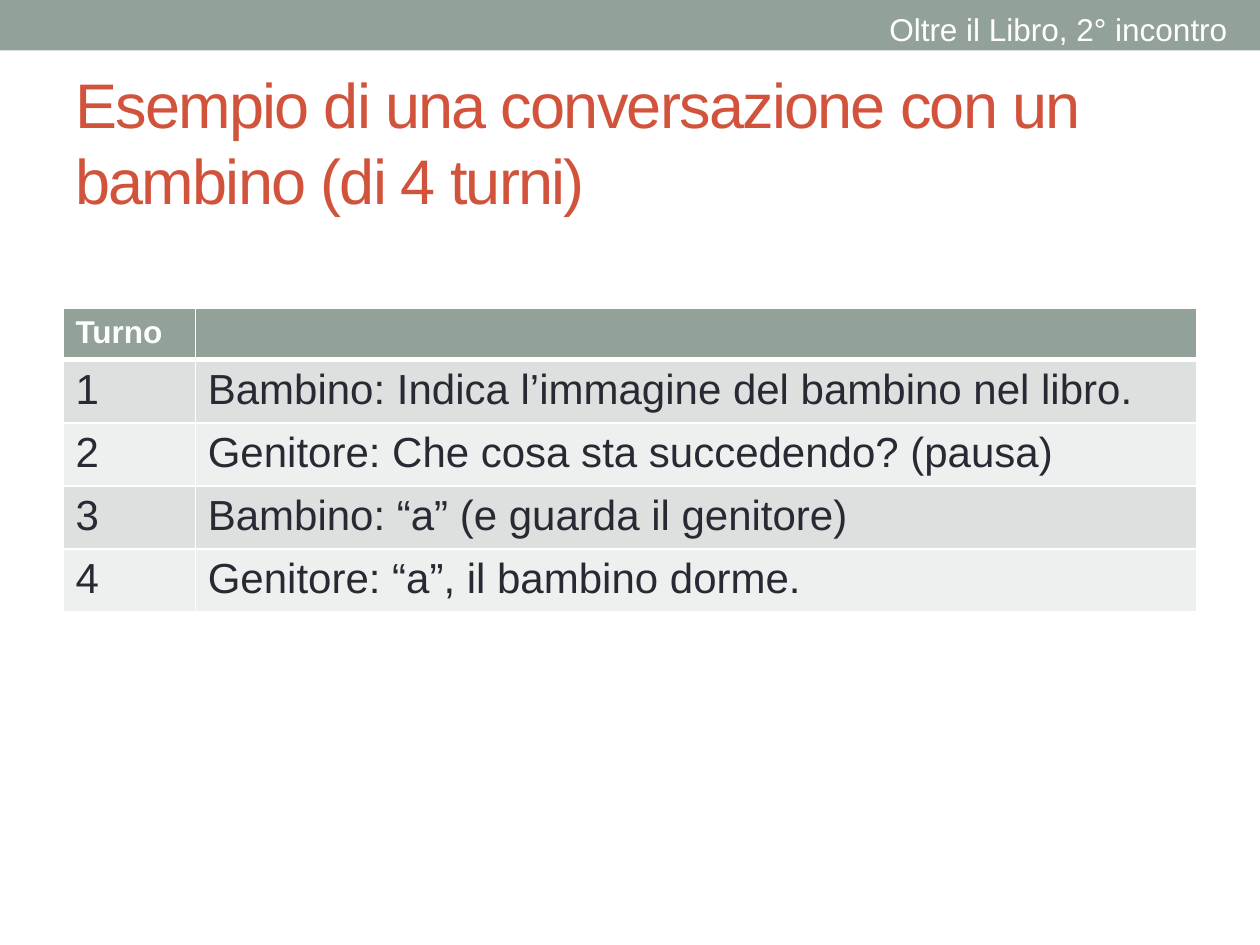
from lxml.etree import SubElement
from pptx import Presentation
from pptx.dml.color import RGBColor
from pptx.enum.shapes import MSO_SHAPE as Shape
from pptx.enum.text import MSO_ANCHOR as Anchor, MSO_AUTO_SIZE as AutoSize
from pptx.oxml.ns import qn
from pptx.util import Pt

SAGE = RGBColor(0x93, 0xA2, 0x99)
BRICK = RGBColor(0xD2, 0x53, 0x3C)
INK = RGBColor(0x29, 0x29, 0x34)
WHITE = RGBColor(0xFF, 0xFF, 0xFF)
BANDS = (RGBColor(0xDC, 0xE0, 0xDE), RGBColor(0xEE, 0xF0, 0xEF))

TURNS = (
    "Bambino: Indica l’immagine del bambino nel libro.",
    "Genitore: Che cosa sta succedendo? (pausa)",
    "Bambino: “a” (e guarda il genitore)",
    "Genitore: “a”, il bambino dorme.",
)


def add_run(frame, text, size, color, bold=False):
    """Add a styled run to the first paragraph of a text frame."""
    run = frame.paragraphs[0].add_run()
    run.text = text
    run.font.name = "Arial"
    run.font.size = Pt(size)
    run.font.color.rgb = color
    run.font.bold = bold
    return run


def add_band(slide, left, top, width, height):
    """Draw the coloured band across the top."""
    band = slide.shapes.add_shape(Shape.RECTANGLE, Pt(left), Pt(top), Pt(width), Pt(height))
    band.shadow.inherit = False
    band.fill.solid()
    band.fill.fore_color.rgb = SAGE
    band.line.fill.background()


def add_title(slide, left, top, width, height):
    """Place the tightly spaced slide title."""
    frame = slide.shapes.add_textbox(Pt(left), Pt(top), Pt(width), Pt(height)).text_frame
    frame.word_wrap = True
    frame.vertical_anchor = Anchor.MIDDLE
    title = add_run(frame, "Esempio di una conversazione con un bambino (di 4 turni)", 36, BRICK)
    title.font._element.set("spc", "-100")


def add_meeting_label(slide, left, top, width, height):
    """Place the meeting label over the band."""
    frame = slide.shapes.add_textbox(Pt(left), Pt(top), Pt(width), Pt(height)).text_frame
    frame.word_wrap = False
    frame.auto_size = AutoSize.SHAPE_TO_FIT_TEXT
    add_run(frame, "Oltre il Libro, 2° incontro", 18, WHITE)


def style_cell(cell, fill, top_width, bottom_width):
    """Give a cell white borders and a solid fill."""
    props = cell._tc.get_or_add_tcPr()
    for side, width in (("L", 1), ("R", 1), ("T", top_width), ("B", bottom_width)):
        border = SubElement(props, qn(f"a:ln{side}"), w=str(Pt(width)))
        SubElement(SubElement(border, qn("a:solidFill")), qn("a:srgbClr"), val=str(WHITE))
    cell.fill.solid()
    cell.fill.fore_color.rgb = fill


def add_turns_table(slide, left, top, width, height):
    """Build the table of conversation turns."""
    rows = [("Turno", "")] + [(str(turn), line) for turn, line in enumerate(TURNS, 1)]
    frame = slide.shapes.add_table(len(rows), 2, Pt(left), Pt(top), Pt(width), Pt(height))
    table = frame.table
    turn_width = 75.6
    table.columns[0].width = Pt(turn_width)
    table.columns[1].width = Pt(width - turn_width)
    for index, texts in enumerate(rows):
        header = index == 0
        table.rows[index].height = Pt(29.2)
        fill = SAGE if header else BANDS[(index - 1) % 2]
        for column, text in enumerate(texts):
            cell = table.cell(index, column)
            style_cell(cell, fill, 3 if index == 1 else 1, 3 if header else 1)
            if text:
                add_run(cell.text_frame, text, 18 if header else 24,
                        WHITE if header else INK, header)
    frame.height = Pt(height)


def main():
    """Build and save the slide."""
    deck = Presentation()
    deck.slide_width, deck.slide_height = Pt(720), Pt(540)
    slide = deck.slides.add_slide(deck.slide_layouts[6])
    add_band(slide, 0, 0, 720, 28.8)
    add_title(slide, 36, 41.76, 648, 77.76)
    add_turns_table(slide, 36, 176.4, 648, 173.52)
    add_meeting_label(slide, 501.12, 2.16, 209.52, 28.8)
    deck.save("out.pptx")


if __name__ == "__main__":
    main()
